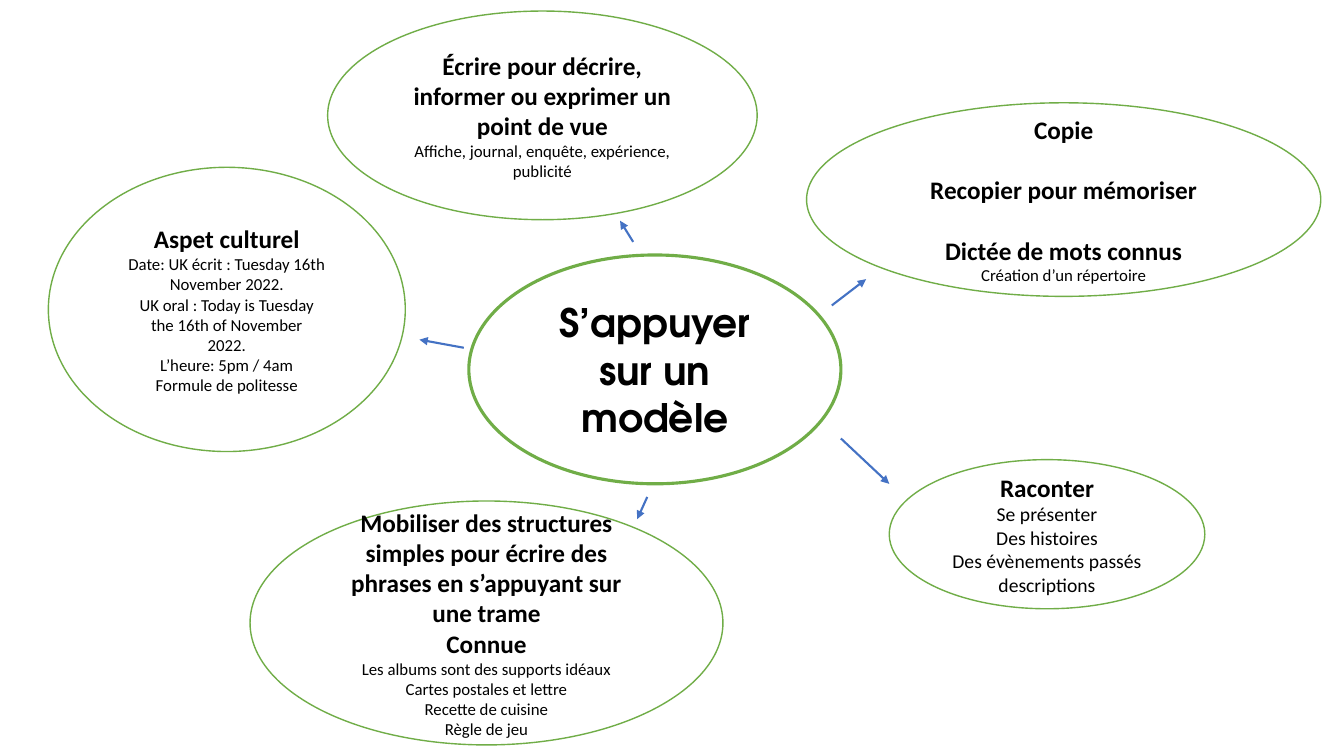
import pptx
import pptx.util
import pptx.dml.color
import pptx.enum.shapes
import pptx.enum.text
import lxml.etree
from pptx.util import Inches, Pt


def tint(code):
    return pptx.dml.color.RGBColor.from_string(code)


class Map:
    """Draw the bubbles and arrows of a mind map on one slide."""

    green, blue, white, black = "70AD47", "4472C4", "FFFFFF", "000000"

    def __init__(self, slide):
        self.slide = slide

    def bubble(self, box, heads, notes=(), size=18, small=12, font="Calibri", width=1, gap=0):
        oval = self.slide.shapes.add_shape(
            pptx.enum.shapes.MSO_SHAPE.OVAL, *[Inches(n) for n in box])
        oval.shadow.inherit = False
        oval.fill.solid()
        oval.fill.fore_color.rgb = tint(self.white)
        oval.line.color.rgb = tint(self.green)
        oval.line.width = Pt(width)
        frame = oval.text_frame
        frame.word_wrap = True
        frame.vertical_anchor = pptx.enum.text.MSO_ANCHOR.MIDDLE
        for i, text in enumerate([*heads, *notes]):
            head = i < len(heads)
            para = frame.add_paragraph() if i else frame.paragraphs[0]
            para.text = text
            para.alignment = pptx.enum.text.PP_ALIGN.CENTER
            if i and head and gap:
                para.space_before = Pt(gap)
            para.font.name = font
            para.font.size = Pt(size if head else small)
            para.font.bold = head
            para.font.color.rgb = tint(self.black)

    def arrow(self, *ends):
        line = self.slide.shapes.add_connector(
            pptx.enum.shapes.MSO_CONNECTOR.STRAIGHT, *[Inches(n) for n in ends])
        line.line.color.rgb = tint(self.blue)
        line.line.width = Pt(1.5)
        props = line.line._get_or_add_ln()
        tag = pptx.oxml.ns.qn
        lxml.etree.SubElement(props, tag("a:tailEnd"), type="triangle")
        lxml.etree.SubElement(line._element.spPr, tag("a:effectLst"))


def main():
    deck = pptx.Presentation()
    deck.slide_width, deck.slide_height = Inches(13.33), Inches(7.5)
    page = Map(deck.slides.add_slide(deck.slide_layouts[6]))

    page.bubble((4.65, 2.53, 3.69, 2.27), ["S’appuyer sur un modèle"],
                size=28, font="TeX Gyre Adventor", width=2.25)
    page.bubble((8, 1.02, 5.1, 1.92),
                ["Copie", "Recopier pour mémoriser", "Dictée de mots connus"],
                ["Création d’un répertoire"], gap=21.6)
    page.bubble((8.82, 4.56, 3.13, 1.48), ["Raconter"],
                ["Se présenter", "Des histoires", "Des évènements passés", "descriptions"],
                small=14)
    page.bubble((2.48, 4.97, 4.69, 2.42),
                ["Mobiliser des structures simples pour écrire des phrases "
                 "en s’appuyant sur une trame", "Connue"],
                ["Les albums sont des supports idéaux", "Cartes postales et lettre",
                 "Recette de cuisine", "Règle de jeu"])
    page.bubble((3.25, 0.11, 4.26, 2.07),
                ["Écrire pour décrire, informer ou exprimer un point de vue"],
                ["Affiche, journal, enquête, expérience, publicité"])
    page.bubble((0.48, 1.66, 3.54, 2.82), ["Aspet culturel"],
                ["Date: UK écrit : Tuesday 16th", "November 2022.",
                 "UK oral : Today is Tuesday", "the 16th of November", "2022.",
                 "L’heure: 5pm / 4am", "Formule de politesse"])

    for ends in [(8.25, 3.03, 8.59, 2.77), (8.34, 4.35, 8.82, 4.8),
                 (6.42, 4.93, 6.32, 5.15), (4.6, 3.45, 4.16, 3.37),
                 (6.28, 2.4, 6.15, 2.19)]:
        page.arrow(*ends)

    deck.save("out.pptx")


if __name__ == "__main__":
    main()
